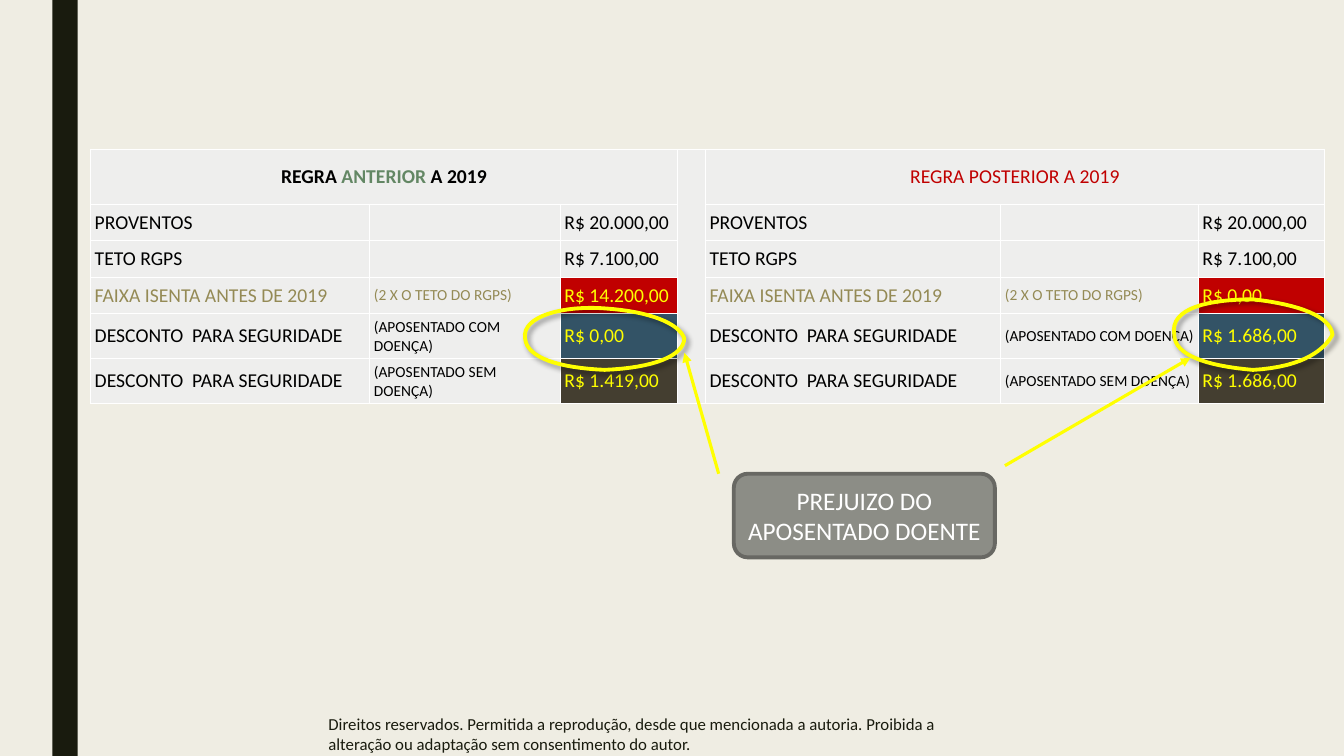
from lxml import etree
from pptx import Presentation
from pptx import util as u
from pptx.dml.color import RGBColor
from pptx.enum import shapes, text
from pptx.oxml.ns import qn

COLORS = {
    "paper": "EFEDE3", "ink": "191B0E", "cell": "EEEEED", "white": "FFFFFF",
    "black": "000000", "green": "638764", "red": "C00000", "olive": "948A55",
    "yellow": "FFFF00", "blue": "335366", "brown": "443E30",
    "gray": "8C8D86", "edge": "686863",
}
FONT = "Calibri"
GRID = u.Inches(1 / 12)
COLUMNS = [33.24, 22.68, 13.92, 3.36, 35.16, 23.52, 15]
ROWS = [6.6] + [4.32] * 5
SPACER = 3
HEADERS = [
    (0, [("REGRA ", "black"), ("ANTERIOR", "green"), (" A 2019", "black")], True),
    (4, [("REGRA POSTERIOR A 2019", "red")], False),
]
RULES = [
    ("PROVENTOS", "", "R$ 20.000,00", "R$ 20.000,00", "black", "black", "cell"),
    ("TETO RGPS", "", "R$ 7.100,00", "R$ 7.100,00", "black", "black", "cell"),
    ("FAIXA ISENTA ANTES DE 2019", "(2 X O TETO DO RGPS)",
     "R$ 14.200,00", "R$ 0,00", "olive", "yellow", "red"),
    ("DESCONTO  PARA SEGURIDADE", "(APOSENTADO COM DOENÇA)",
     "R$ 0,00", "R$ 1.686,00", "black", "yellow", "blue"),
    ("DESCONTO  PARA SEGURIDADE", "(APOSENTADO SEM DOENÇA)",
     "R$ 1.419,00", "R$ 1.686,00", "black", "yellow", "brown"),
]
RINGS = [
    [(62.52, 40.32), (62.04, 37.56), (67.32, 36.36), (72, 36.72),
     (77.4, 37.08), (80.88, 38.52), (81.48, 40.32),
     (81.36, 42.36), (77.88, 43.8), (72, 44.04),
     (66.48, 43.8), (62.76, 42.6), (62.52, 40.32)],
    [(139.8, 39.84), (139.2, 36.6), (144.12, 35.64), (149.16, 35.64),
     (154.68, 36.24), (158.4, 37.68), (158.64, 39.84),
     (157.8, 41.4), (155.52, 43.68), (149.16, 44.04),
     (143.52, 43.56), (139.8, 42.24), (139.8, 39.84)],
]
ARROWS = [(85.56, 56.4, 81.48, 42), (119.64, 55.44, 141.72, 42.6)]


def rgb(name):
    return RGBColor.from_string(COLORS[name])


def cells(*counts):
    return [round(count * GRID) for count in counts]


def paint(target, name):
    target.fill.solid()
    target.fill.fore_color.rgb = rgb(name)


def stroke(line, name, width):
    line.color.rgb = rgb(name)
    line.width = u.Pt(width)


def set_font(font, size, color=None, bold=False):
    font.name, font.size, font.bold = FONT, u.Pt(size), bold
    if color:
        font.color.rgb = rgb(color)


def add_block(slide, kind, box, fill):
    block = slide.shapes.add_shape(kind, *cells(*box))
    block.shadow.inherit = False
    paint(block, fill)
    block.line.fill.background()
    return block


def write(frame, wording, size, color, align=text.PP_ALIGN.LEFT):
    frame.word_wrap = True
    frame.vertical_anchor = text.MSO_ANCHOR.MIDDLE
    line = frame.paragraphs[0]
    line.text = wording
    line.alignment = align
    set_font(line.font, size, color)


def add_borders(cell):
    properties = cell._tc.get_or_add_tcPr()
    for index, side in enumerate(("lnL", "lnR", "lnT", "lnB")):
        border = etree.Element(qn(f"a:{side}"), w=str(u.Pt(1)))
        solid = etree.SubElement(border, qn("a:solidFill"))
        etree.SubElement(solid, qn("a:srgbClr"), val=COLORS["white"])
        properties.insert(index, border)


def style_cell(cell):
    cell.margin_left = cell.margin_right = u.Inches(0.04)
    cell.margin_top = cell.margin_bottom = u.Inches(0.04)
    cell.vertical_anchor = text.MSO_ANCHOR.MIDDLE
    set_font(cell.text_frame.paragraphs[0].font, 14)
    paint(cell, "cell")
    add_borders(cell)


def fill_cell(cell, wording, size, color, fill="cell"):
    if wording:
        write(cell.text_frame, wording, size, color)
    paint(cell, fill)


def add_comparison(slide):
    box = cells(10.8, 17.76, sum(COLUMNS), sum(ROWS))
    table = slide.shapes.add_table(len(ROWS), len(COLUMNS), *box).table
    for column, width in zip(table.columns, cells(*COLUMNS)):
        column.width = width
    for row, height in zip(table.rows, cells(*ROWS)):
        row.height = height
    for cell in table.iter_cells():
        style_cell(cell)
    for start, parts, bold in HEADERS:
        header = table.cell(0, start)
        header.merge(table.cell(0, start + 2))
        title = header.text_frame.paragraphs[0]
        title.alignment = text.PP_ALIGN.CENTER
        for wording, color in parts:
            run = title.add_run()
            run.text = wording
            set_font(run.font, 14, color, bold)
    table.cell(0, SPACER).merge(table.cell(len(ROWS) - 1, SPACER))
    for row, rule in enumerate(RULES, 1):
        label, note, before, after, label_color, value_color, value_fill = rule
        for (start, _, _), value in zip(HEADERS, (before, after)):
            fill_cell(table.cell(row, start), label, 14, label_color)
            fill_cell(table.cell(row, start + 1), note, 11, label_color)
            fill_cell(table.cell(row, start + 2), value, 14, value_color, value_fill)


def curve_points(nodes, steps=16):
    """Sample a chain of cubic curves given as start, control, control, end."""
    for first in range(0, len(nodes) - 1, 3):
        for step in range(1, steps + 1):
            t = step / steps
            weights = ((1 - t) ** 3, 3 * t * (1 - t) ** 2, 3 * t * t * (1 - t), t ** 3)
            segment = nodes[first:first + 4]
            yield cells(*(sum(w * node[axis] for w, node in zip(weights, segment))
                          for axis in (0, 1)))


def add_ring(slide, nodes):
    outline = slide.shapes.build_freeform(*cells(*nodes[0]))
    outline.add_line_segments(list(curve_points(nodes)), close=True)
    ring = outline.convert_to_shape()
    ring.fill.background()
    stroke(ring.line, "yellow", 2.75)
    ring.shadow.inherit = False
    effects = ring._element.spPr.find(qn("a:effectLst"))
    shadow = etree.SubElement(effects, qn("a:outerShdw"), blurRad=str(u.Pt(4)),
                              dist=str(u.Pt(3)), dir=str(45 * 60000))
    tint = etree.SubElement(shadow, qn("a:srgbClr"), val=COLORS["black"])
    etree.SubElement(tint, qn("a:alpha"), val="40000")


def add_arrow(slide, ends):
    arrow = slide.shapes.add_connector(shapes.MSO_CONNECTOR.STRAIGHT, *cells(*ends))
    stroke(arrow.line, "yellow", 2.25)
    etree.SubElement(arrow.line._get_or_add_ln(), qn("a:tailEnd"), type="triangle")
    etree.SubElement(arrow._element.spPr, qn("a:effectLst"))


def main():
    deck = Presentation()
    deck.slide_width, deck.slide_height = cells(160, 90)
    slide = deck.slides.add_slide(deck.slide_layouts[6])
    paint(slide.background, "paper")

    add_block(slide, shapes.MSO_SHAPE.RECTANGLE, (6.24, 0, 3, 90), "ink")
    rights = slide.shapes.add_textbox(*cells(37.92, 84.72, 82.44, 5.28))
    write(rights.text_frame,
          "Direitos reservados. Permitida a reprodução, desde que mencionada a autoria. "
          "Proibida a alteração ou adaptação sem consentimento do autor.", 12, "ink")
    add_comparison(slide)

    loss = add_block(slide, shapes.MSO_SHAPE.ROUNDED_RECTANGLE,
                     (87.36, 56.4, 31.08, 9.96), "gray")
    stroke(loss.line, "edge", 2.75)
    write(loss.text_frame, "PREJUIZO DO APOSENTADO DOENTE", 18, "white",
          text.PP_ALIGN.CENTER)
    for nodes in RINGS:
        add_ring(slide, nodes)
    for ends in ARROWS:
        add_arrow(slide, ends)
    deck.save("out.pptx")


if __name__ == "__main__":
    main()
